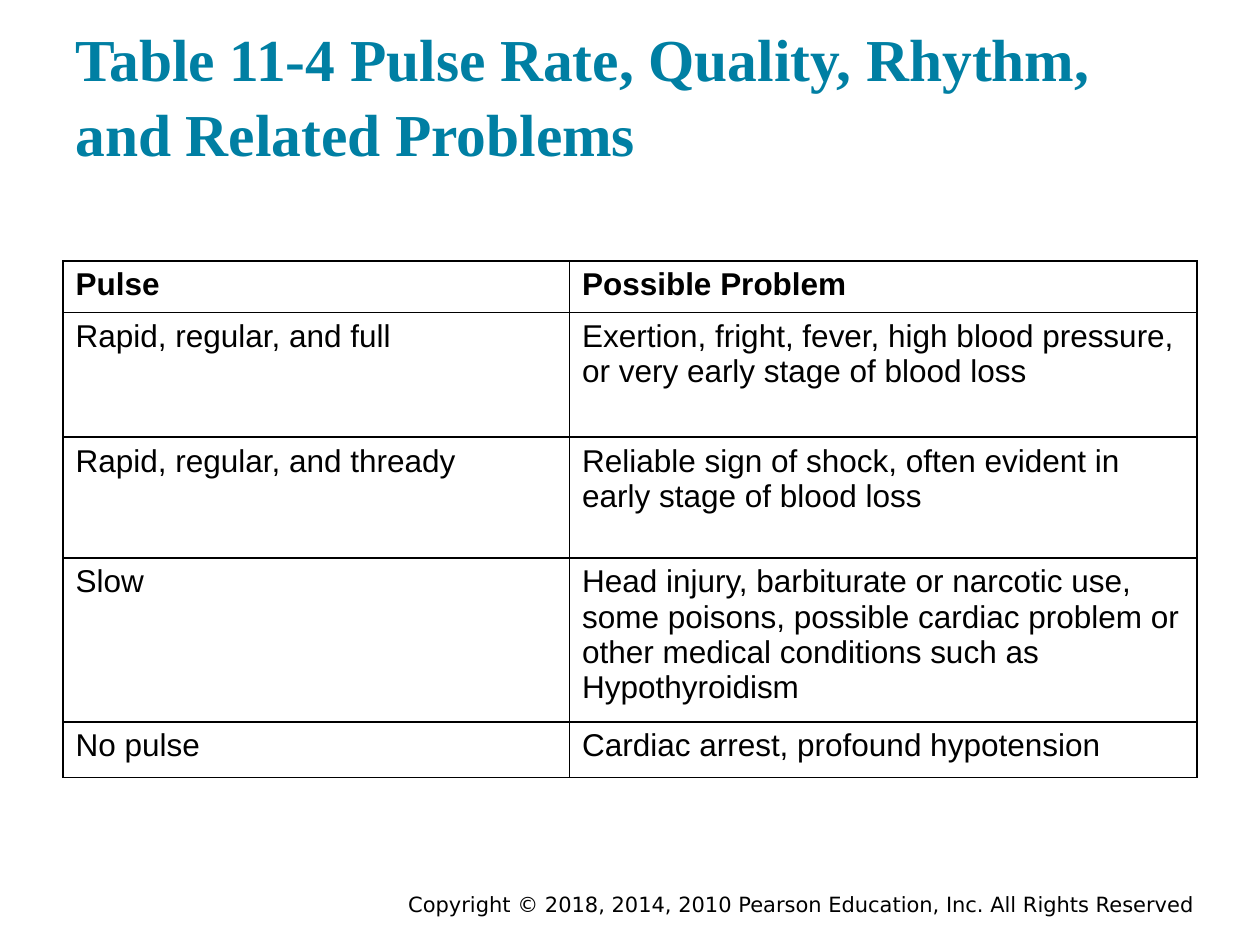
from lxml.etree import SubElement
from pptx import Presentation
from pptx.dml.color import RGBColor
from pptx.enum.text import MSO_ANCHOR, PP_ALIGN
from pptx.oxml.ns import qn
from pptx.util import Inches, Pt

COLORS = {"title": "007FA3", "ink": "000000", "paper": "FFFFFF"}
TITLE = "Table 11-4 Pulse Rate, Quality, Rhythm, and Related Problems"
COPYRIGHT = "Copyright © 2018, 2014, 2010 Pearson Education, Inc. All Rights Reserved"
PULSE_PROBLEMS = [
    ("Pulse", "Possible Problem"),
    ("Rapid, regular, and full",
     "Exertion, fright, fever, high blood pressure,\nor very early stage of blood loss"),
    ("Rapid, regular, and thready",
     "Reliable sign of shock, often evident in early stage of blood loss"),
    ("Slow",
     "Head injury, barbiturate or narcotic use, some poisons, possible cardiac "
     "problem or other medical conditions such as Hypothyroidism"),
    ("No pulse", "Cardiac arrest, profound hypotension"),
]
COLUMN_WIDTHS = [4.02, 4.98]
ROW_HEIGHTS = [0.41, 0.99, 0.96, 1.28, 0.44]


def write_text(frame, text, size=18, font="Arial", color="ink", bold=False,
               align=PP_ALIGN.LEFT, spacing=None):
    """Fill a text frame with formatted paragraphs, one per line of text."""
    frame.word_wrap = True
    frame.text = text
    for paragraph in frame.paragraphs:
        paragraph.alignment = align
        paragraph.line_spacing = spacing
        for run in paragraph.runs:
            run.font.size = Pt(size)
            run.font.name = font
            run.font.bold = bold
            run.font.color.rgb = RGBColor.from_string(COLORS[color])


def add_title(slide, left, top, width, height):
    """Place the slide title at the bottom of its box."""
    frame = slide.shapes.add_textbox(left, top, width, height).text_frame
    frame.vertical_anchor = MSO_ANCHOR.BOTTOM
    frame.margin_top = frame.margin_bottom = Inches(0.1)
    write_text(frame, TITLE, size=34, font="Times New Roman", color="title",
               bold=True, spacing=1.05)


def add_copyright(slide, left, top, width, height):
    """Place the right-aligned copyright line."""
    frame = slide.shapes.add_textbox(left, top, width, height).text_frame
    frame.vertical_anchor = MSO_ANCHOR.MIDDLE
    write_text(frame, COPYRIGHT, size=12, font="DejaVu Sans", align=PP_ALIGN.RIGHT)


def draw_borders(cell):
    """Rule all four sides of a table cell."""
    properties = cell._tc.get_or_add_tcPr()
    for side in ("a:lnL", "a:lnR", "a:lnT", "a:lnB"):
        border = SubElement(properties, qn(side), w=str(Pt(1)))
        fill = SubElement(border, qn("a:solidFill"))
        SubElement(fill, qn("a:srgbClr"), val=COLORS["ink"])


def add_pulse_table(slide, left, top, width, height):
    """Place the ruled table of pulse findings and possible problems."""
    table = slide.shapes.add_table(len(ROW_HEIGHTS), len(COLUMN_WIDTHS),
                                   left, top, width, height).table
    table.horz_banding = False
    for column, share in zip(table.columns, COLUMN_WIDTHS):
        column.width = int(width * share / sum(COLUMN_WIDTHS))
    for row, share in zip(table.rows, ROW_HEIGHTS):
        row.height = int(height * share / sum(ROW_HEIGHTS))
    for row_index, entries in enumerate(PULSE_PROBLEMS):
        for column_index, entry in enumerate(entries):
            cell = table.cell(row_index, column_index)
            write_text(cell.text_frame, entry, bold=row_index == 0)
            draw_borders(cell)
            cell.fill.solid()
            cell.fill.fore_color.rgb = RGBColor.from_string(COLORS["paper"])


def main():
    """Build the slide and save it."""
    presentation = Presentation()
    presentation.slide_width = Inches(10)
    presentation.slide_height = Inches(7.5)
    slide = presentation.slides.add_slide(presentation.slide_layouts[6])
    add_copyright(slide, Inches(2.92), Inches(7.05), Inches(6.66), Inches(0.25))
    add_title(slide, Inches(0.5), Inches(0.24), Inches(9), Inches(1.2))
    add_pulse_table(slide, Inches(0.5), Inches(2.07), Inches(9), Inches(4.08))
    presentation.save("out.pptx")


if __name__ == "__main__":
    main()
